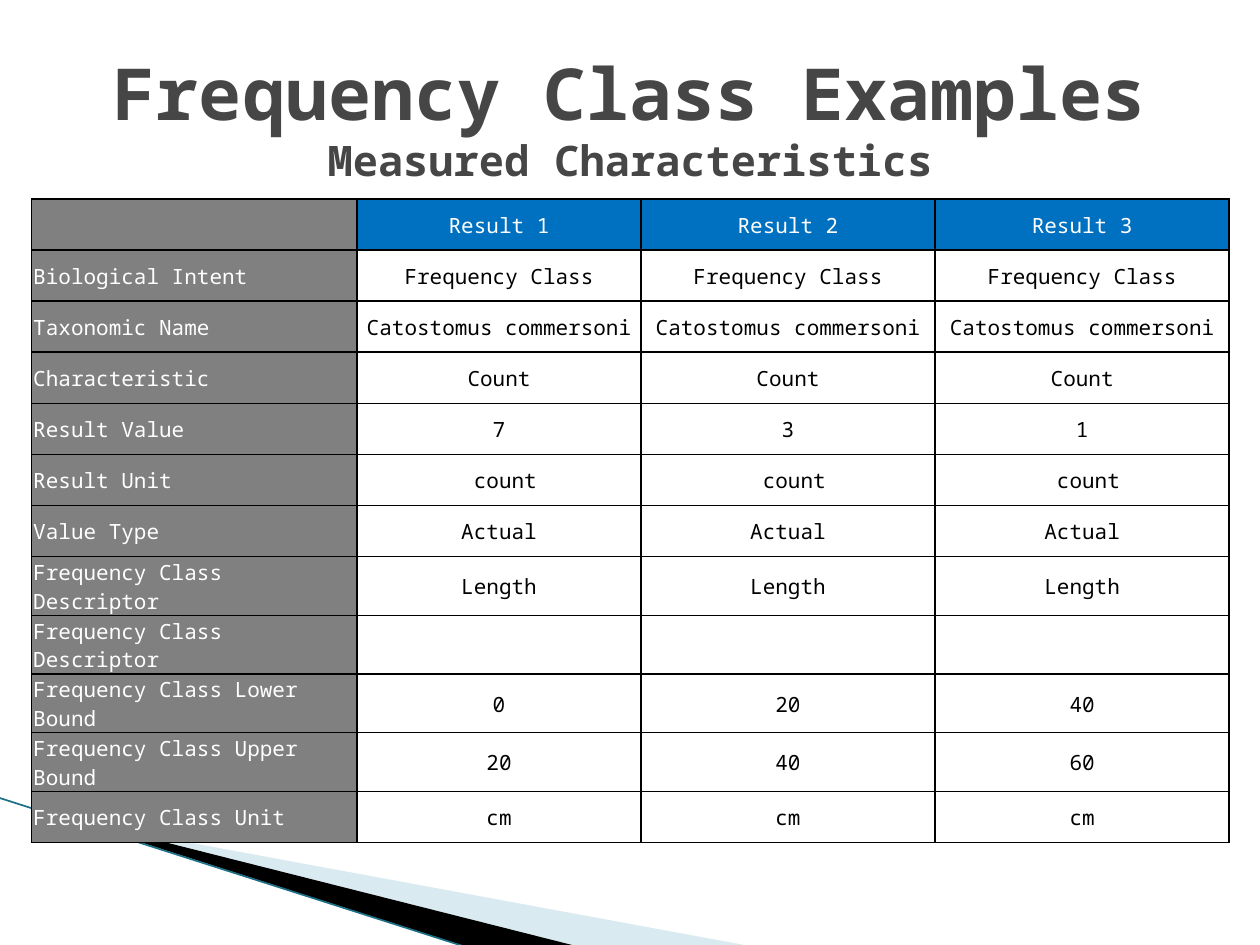
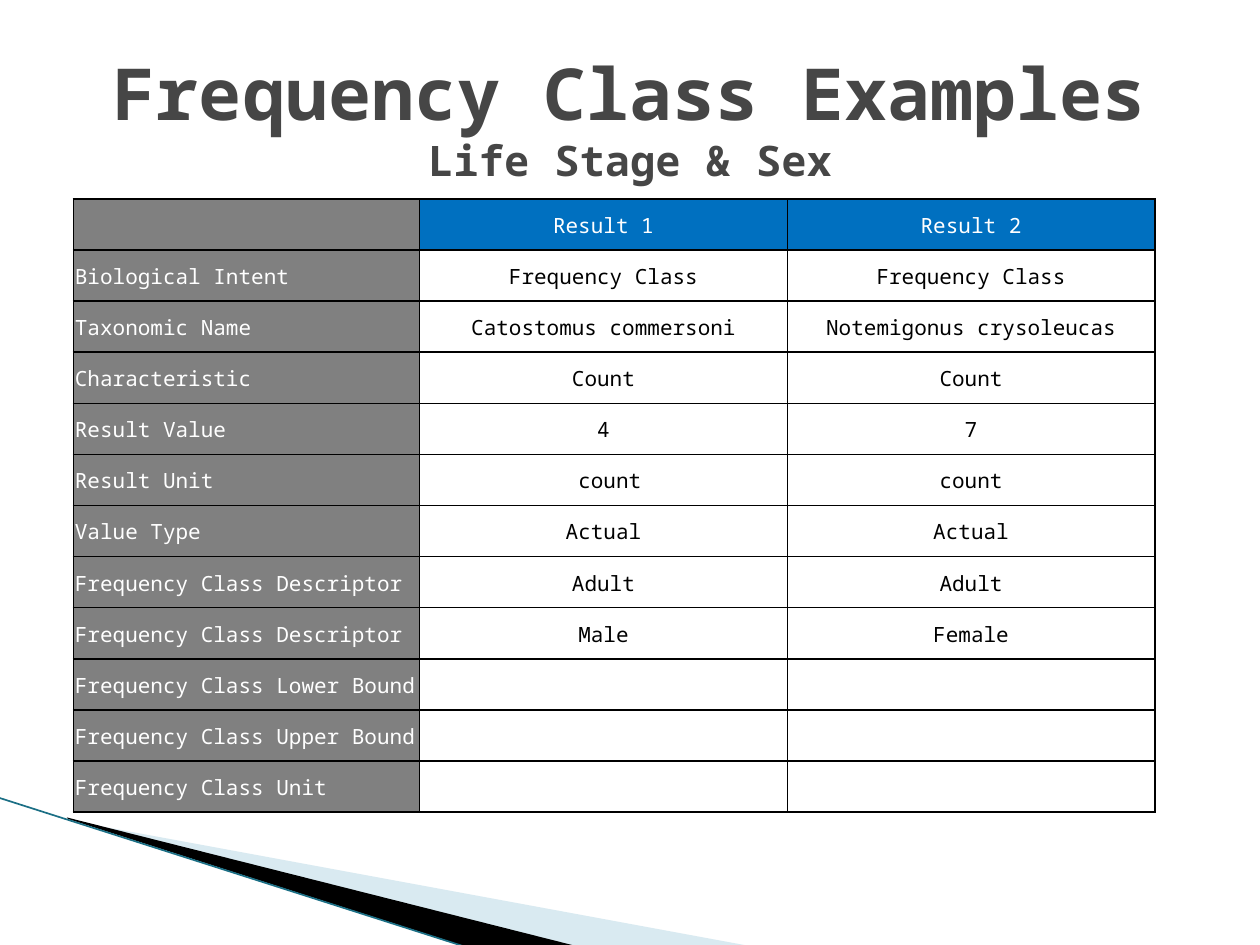
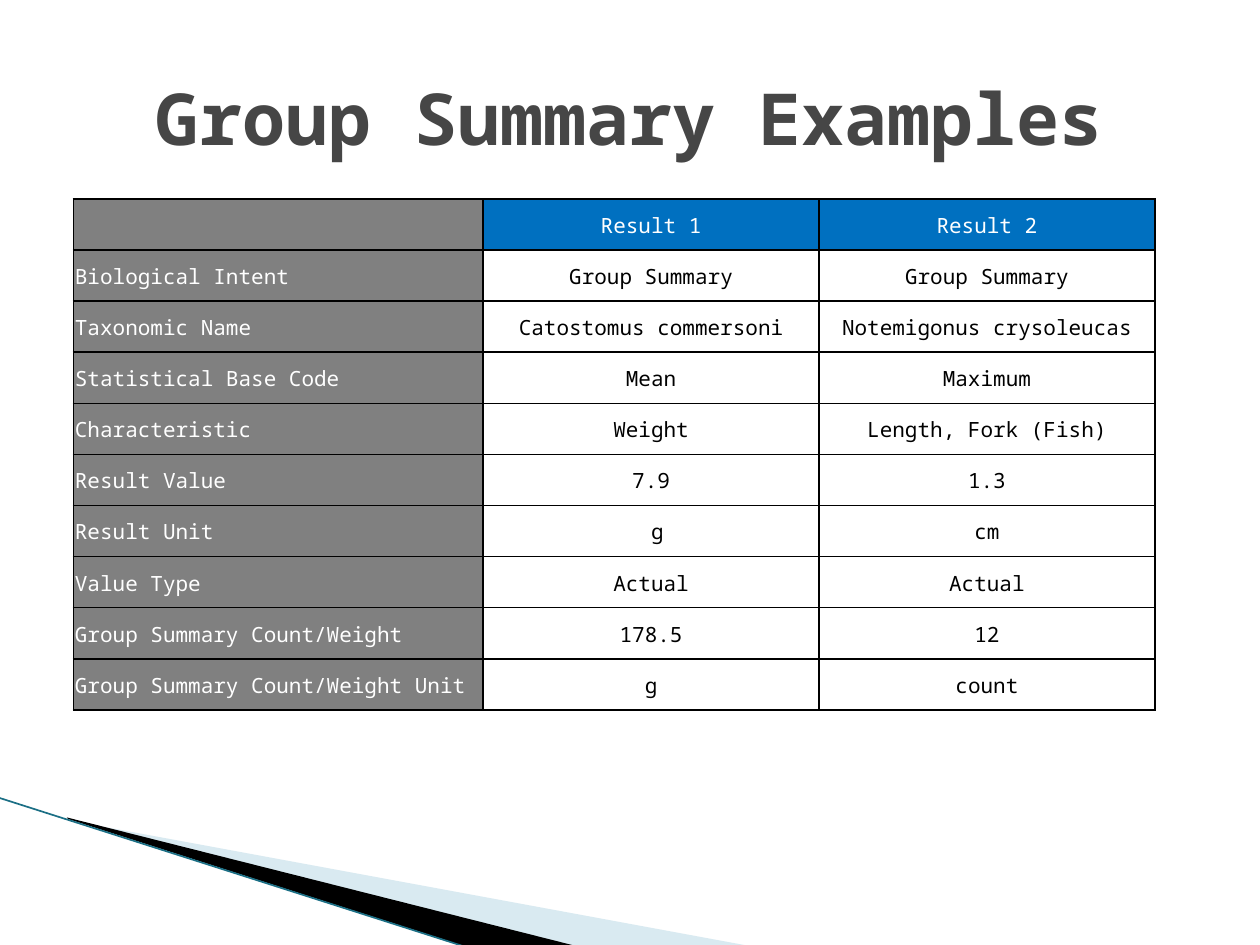
from copy import deepcopy
from dataclasses import dataclass

from lxml.etree import SubElement
from pptx import Presentation
from pptx.dml.color import RGBColor as RGB
from pptx.enum.shapes import MSO_CONNECTOR as CONN
from pptx.enum.text import MSO_ANCHOR as ANCHOR, MSO_AUTO_SIZE as FIT, PP_ALIGN as ALIGN
from pptx.oxml.ns import qn
from pptx.util import Cm, Pt


@dataclass(frozen=True)
class Theme:
    font: str = "Noto Sans Mono"
    title: str = "464646"
    label: str = "808080"
    header: str = "0070C0"
    light: str = "FFFFFF"
    dark: str = "000000"
    pale: str = "A0CBDC"
    edge: str = "1B6F85"
    title_size: float = 41
    subtitle_size: float = 24
    cell_size: float = 12


T = Theme()
TITLE_BOX = (1.27, 0.76, 22.86, 3.18)
SWOOSH_BOX = (0, 16.08)
TABLE_TOP = 4.01
ROW_HEIGHT = 1.03

# Wedges as (colour, opacity in percent, corners relative to the swoosh box)
WEDGES = [
    (T.pale, 40, [(1.4, 0.46), (15.11, 2.99), (11.58, 2.99), (1.4, 0.43)]),
    (T.dark, 100, [(1.35, 0.4), (11.61, 2.99), (9.45, 3.02), (1.37, 0.43)]),
]

FREQUENCY = "Frequency Class"
SUCKER, SHINER = "Catostomus commersoni", "Notemigonus crysoleucas"

SLIDES = [
    dict(
        title=["Frequency Class Examples", "Measured Characteristics"],
        left=0.64, widths=[6.56, 5.72, 5.93, 5.93],
        rows=[
            ("Biological Intent", *[FREQUENCY] * 3),
            ("Taxonomic Name", *[SUCKER] * 3),
            ("Characteristic", *["Count"] * 3),
            ("Result Value", "7", "3", "1"),
            ("Result Unit", *[" count"] * 3),
            ("Value Type", *["Actual"] * 3),
            ("Frequency Class Descriptor", *["Length"] * 3),
            ("Frequency Class Descriptor", "", "", ""),
            ("Frequency Class Lower Bound", "0", "20", "40"),
            ("Frequency Class Upper Bound", "20", "40", "60"),
            ("Frequency Class Unit", *["cm"] * 3),
        ],
    ),
    dict(
        title=["Frequency Class Examples", "Life Stage & Sex"],
        left=1.48, widths=[6.98, 7.41, 7.41],
        rows=[
            ("Biological Intent", FREQUENCY, FREQUENCY),
            ("Taxonomic Name", SUCKER, SHINER),
            ("Characteristic", "Count", "Count"),
            ("Result Value", "4", "7"),
            ("Result Unit", " count", "count"),
            ("Value Type", "Actual", "Actual"),
            ("Frequency Class Descriptor", "Adult", "Adult"),
            ("Frequency Class Descriptor", "Male", "Female"),
            ("Frequency Class Lower Bound", "", ""),
            ("Frequency Class Upper Bound", "", ""),
            ("Frequency Class Unit", "", ""),
        ],
    ),
    dict(
        title=["Group Summary Examples"],
        left=1.48, widths=[8.26, 6.77, 6.77],
        rows=[
            ("Biological Intent", "Group Summary", "Group Summary"),
            ("Taxonomic Name", SUCKER, SHINER),
            ("Statistical Base Code", "Mean", "Maximum"),
            ("Characteristic", "Weight", "Length, Fork (Fish)"),
            ("Result Value", "7.9", "1.3"),
            ("Result Unit", " g", "cm"),
            ("Value Type", "Actual", "Actual"),
            ("Group Summary Count/Weight", "178.5", "12"),
            ("Group Summary Count/Weight Unit", "g", "count"),
        ],
    ),
]


def apply(obj, **values):
    for name, value in values.items():
        setattr(obj, name, value)


def add_run(p, text, size, color, bold=False):
    r = p.add_run()
    r.text = text
    apply(r.font, name=T.font, size=Pt(size), bold=bold)
    r.font.color.rgb = RGB.from_string(color)
    return r


def add_swoosh(s, left, top):
    # Filled wedges
    for color, opacity, corners in WEDGES:
        start, *rest = [(Cm(left + x), Cm(top + y)) for x, y in corners]
        builder = s.shapes.build_freeform(*start)
        builder.add_line_segments(rest)
        sp = builder.convert_to_shape()
        sp.shadow.inherit = False
        sp.line.fill.background()
        sp.fill.solid()
        sp.fill.fore_color.rgb = RGB.from_string(color)
        if opacity < 100:
            clr = sp.fill._xPr.find(qn("a:solidFill"))[0]
            SubElement(clr, qn("a:alpha"), val=str(opacity * 1000))
    # Lower edge
    line = s.shapes.add_connector(
        CONN.STRAIGHT, Cm(left - 0.03), Cm(top), Cm(left + 9.42), Cm(top + 3.02))
    line.line.width = Pt(0.95)
    line.line.color.rgb = RGB.from_string(T.edge)
    SubElement(line._element.spPr, qn("a:effectLst"))


def set_title(s, lines, left, top, width, height):
    sp = s.shapes.title
    apply(sp, left=Cm(left), top=Cm(top), width=Cm(width), height=Cm(height))
    tf = sp.text_frame
    apply(tf, word_wrap=True, auto_size=FIT.NONE, vertical_anchor=ANCHOR.MIDDLE)
    p = tf.paragraphs[0]
    p.alignment = ALIGN.CENTER
    r = add_run(p, lines[0], T.title_size, T.title, True)
    for text in lines[1:]:
        # The break takes the heading's size
        p.add_line_break()
        r._r.getnext().append(deepcopy(r._r.rPr))
        add_run(p, text, T.subtitle_size, T.title, True)


def add_borders(cell):
    tcPr = cell._tc.get_or_add_tcPr()
    for side in ("lnL", "lnR", "lnT", "lnB"):
        ln = SubElement(tcPr, qn(f"a:{side}"), w=str(Pt(1)))
        SubElement(SubElement(ln, qn("a:solidFill")), qn("a:srgbClr"), val=T.dark)


def fill_cell(cell, text, fill, color, align):
    add_borders(cell)
    if fill:
        cell.fill.solid()
        cell.fill.fore_color.rgb = RGB.from_string(fill)
    else:
        cell.fill.background()
    apply(cell, vertical_anchor=ANCHOR.MIDDLE, margin_left=Cm(0.03),
          margin_right=Cm(0.03), margin_top=Cm(0.03), margin_bottom=0)
    p = cell.text_frame.paragraphs[0]
    p.alignment = align
    if text:
        add_run(p, text, T.cell_size, color)


def add_results(s, rows, widths, left, top):
    header = ("", *[f"Result {n}" for n in range(1, len(widths))])
    rows = [header, *rows]
    table = s.shapes.add_table(
        len(rows), len(widths), Cm(left), Cm(top),
        Cm(sum(widths)), Cm(ROW_HEIGHT * len(rows))).table
    apply(table, first_row=False, horz_banding=False)
    for column, width in zip(table.columns, widths):
        column.width = Cm(width)
    for i, row in enumerate(rows):
        table.rows[i].height = Cm(ROW_HEIGHT)
        for j, text in enumerate(row):
            if j == 0:
                look = (T.label, T.light, ALIGN.LEFT)
            elif i == 0:
                look = (T.header, T.light, ALIGN.CENTER)
            else:
                look = (None, T.dark, ALIGN.CENTER)
            fill_cell(table.cell(i, j), text, *look)


def add_example_slide(prs, title, left, widths, rows):
    s = prs.slides.add_slide(prs.slide_layouts[5])
    add_swoosh(s, *SWOOSH_BOX)
    set_title(s, title, *TITLE_BOX)
    add_results(s, rows, widths, left, TABLE_TOP)


def main():
    prs = Presentation()
    apply(prs, slide_width=Cm(25.4), slide_height=Cm(19.05))
    for content in SLIDES:
        add_example_slide(prs, **content)
    prs.save("out.pptx")


if __name__ == "__main__":
    main()
